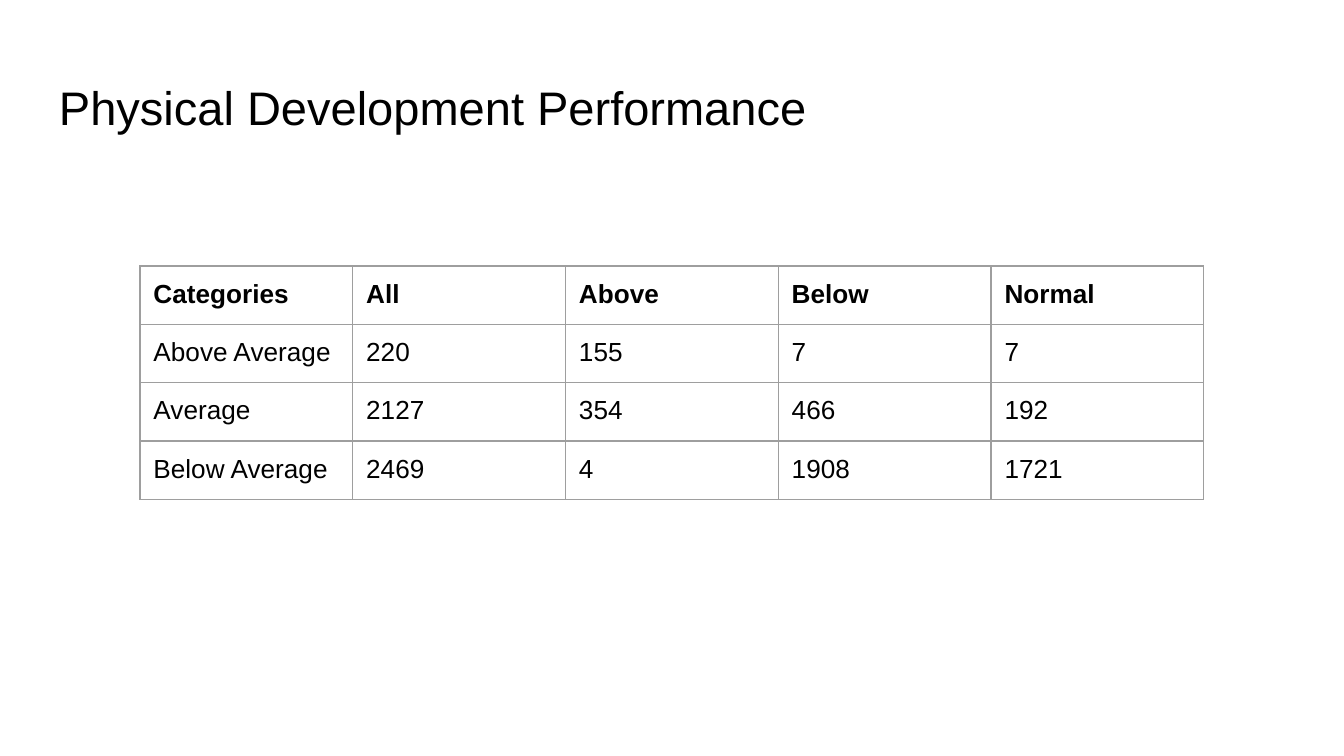
from dataclasses import dataclass

from lxml import etree
from pptx import Presentation
from pptx.dml.color import RGBColor
from pptx.enum.text import MSO_ANCHOR
from pptx.oxml.ns import qn
from pptx.util import Pt

TOP = MSO_ANCHOR.TOP
BLANK_LAYOUT = 6
BORDER_TAGS = ("a:lnL", "a:lnR", "a:lnT", "a:lnB")


@dataclass(frozen=True)
class Theme:
    font: str = "Arial"
    ink: str = "000000"
    paper: str = "FFFFFF"
    border: str = "9E9E9E"
    border_width: float = 0.75
    title_size: float = 25.2
    table_size: float = 14
    inset: float = 7.2


THEME = Theme()

PERFORMANCE = (
    ("Categories", "All", "Above", "Below", "Normal"),
    ("Above Average", "220", "155", "7", "7"),
    ("Average", "2127", "354", "466", "192"),
    ("Below Average", "2469", "4", "1908", "1721"),
)


def set_insets(target):
    """Give a cell or a text frame the same margin on all sides."""
    inset = Pt(THEME.inset)
    target.margin_left = target.margin_right = inset
    target.margin_top = target.margin_bottom = inset


def write(frame, text, size, bold=False):
    frame.text = text
    font = frame.paragraphs[0].runs[0].font
    font.name = THEME.font
    font.size = Pt(size)
    font.bold = bold
    font.color.rgb = RGBColor.from_string(THEME.ink)


def add_title(page, text, left, top, width, height):
    box = page.shapes.add_textbox(Pt(left), Pt(top), Pt(width), Pt(height))
    frame = box.text_frame
    frame.word_wrap = True
    frame.vertical_anchor = TOP
    set_insets(frame)
    write(frame, text, THEME.title_size)


def add_borders(cell):
    properties = cell._tc.get_or_add_tcPr()
    for tag in BORDER_TAGS:
        line = etree.SubElement(properties, qn(tag), w=str(Pt(THEME.border_width)))
        fill = etree.SubElement(line, qn("a:solidFill"))
        etree.SubElement(fill, qn("a:srgbClr"), val=THEME.border)


def add_grid(page, rows, left, top, column_width, row_height):
    """Add a bordered table with equal columns and a bold first row."""
    column_count = len(rows[0])
    table = page.shapes.add_table(
        len(rows), column_count, Pt(left), Pt(top),
        Pt(column_width * column_count), Pt(row_height * len(rows)),
    ).table
    table.first_row = table.horz_banding = False
    for column in table.columns:
        column.width = Pt(column_width)
    for row_index, values in enumerate(rows):
        table.rows[row_index].height = Pt(row_height)
        for column_index, value in enumerate(values):
            cell = table.cell(row_index, column_index)
            set_insets(cell)
            cell.vertical_anchor = TOP
            add_borders(cell)
            cell.fill.background()
            write(cell.text_frame, value, THEME.table_size, bold=row_index == 0)


def main():
    deck = Presentation()
    deck.slide_width = Pt(720)
    deck.slide_height = Pt(405)
    page = deck.slides.add_slide(deck.slide_layouts[BLANK_LAYOUT])
    background = page.background.fill
    background.solid()
    background.fore_color.rgb = RGBColor.from_string(THEME.paper)

    add_title(page, "Physical Development Performance", 24.5, 35, 671, 45)
    add_grid(page, PERFORMANCE, left=75, top=142.5, column_width=114, row_height=30)
    deck.save("out.pptx")


if __name__ == "__main__":
    main()
